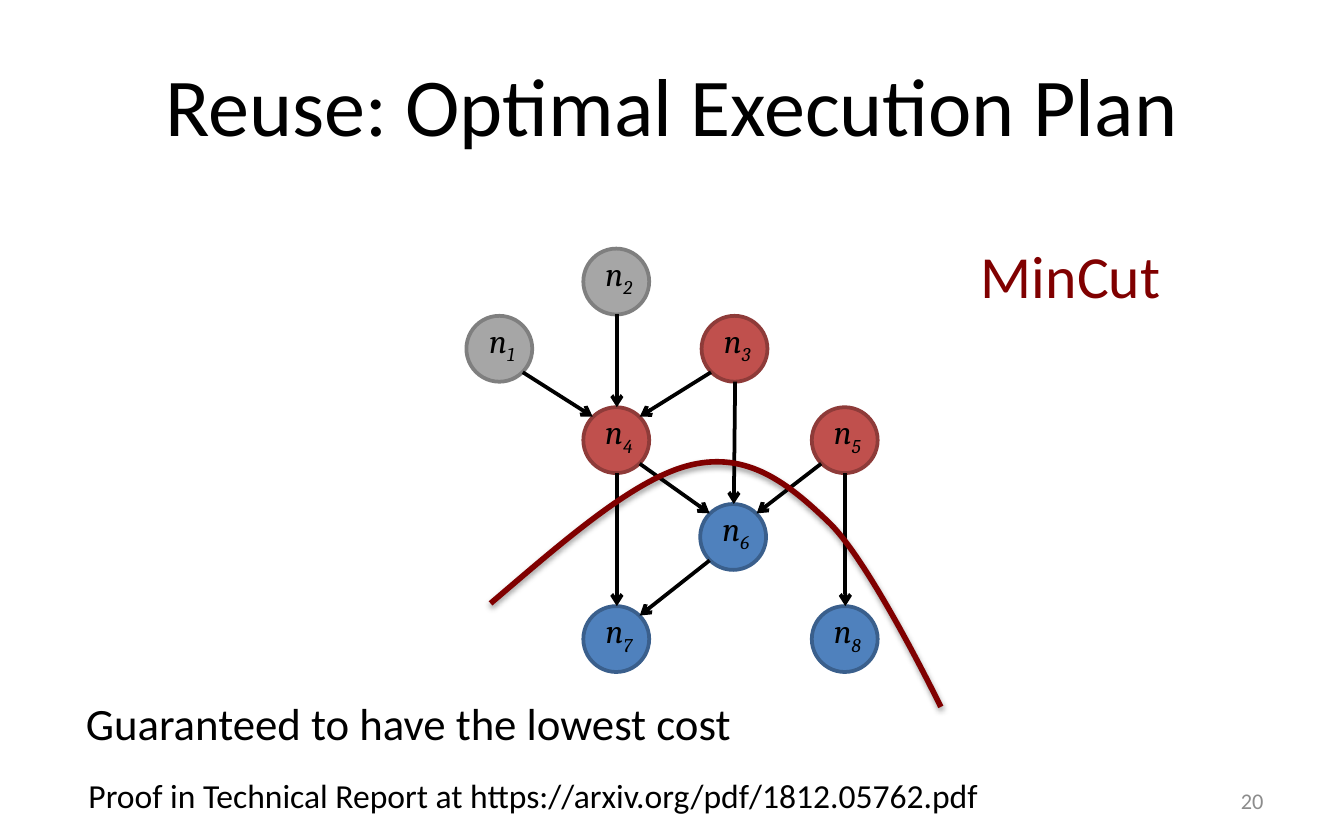
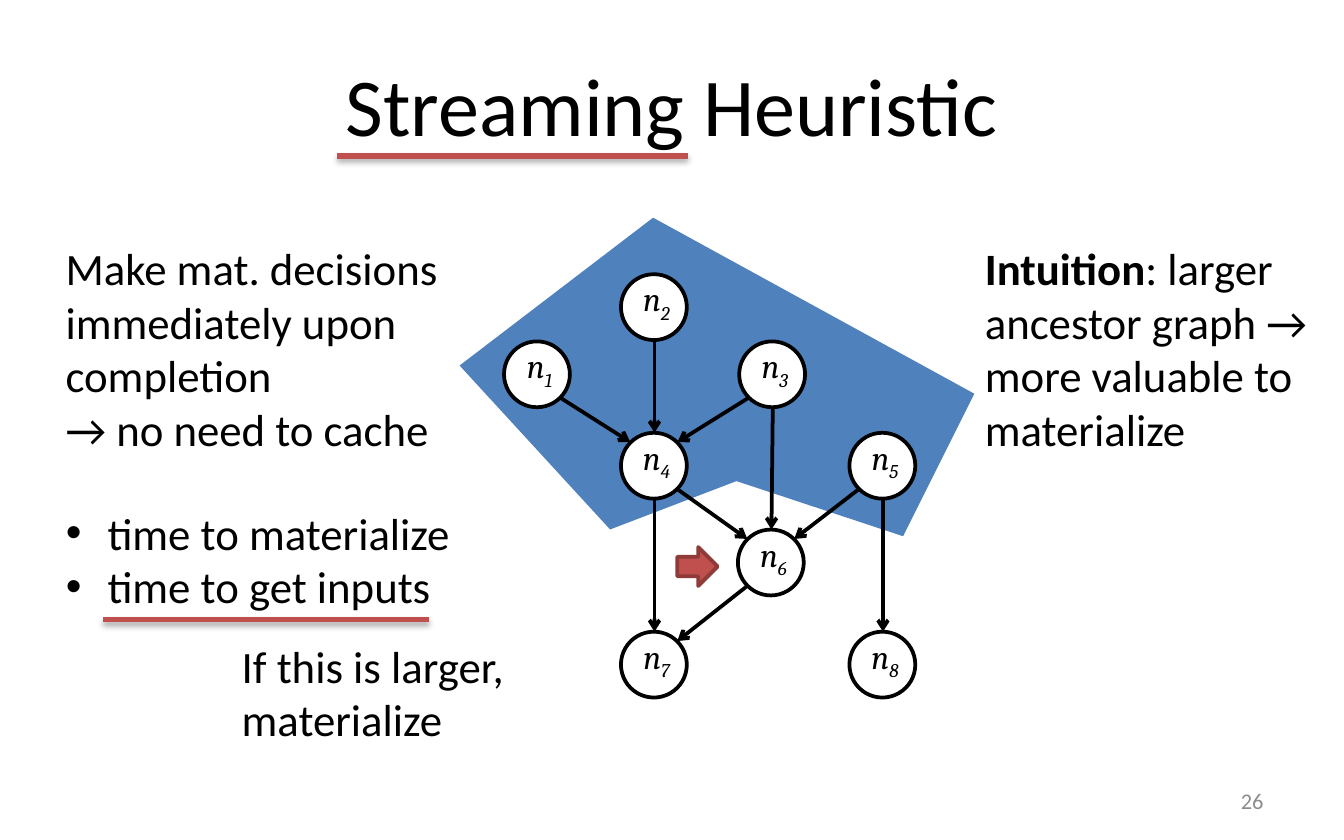
from dataclasses import dataclass
from typing import Any, NamedTuple

from lxml.etree import SubElement
from pptx import Presentation
from pptx.dml.color import RGBColor
from pptx.enum.shapes import MSO_CONNECTOR, MSO_SHAPE
from pptx.enum.text import MSO_ANCHOR, MSO_AUTO_SIZE, PP_ALIGN
from pptx.oxml.ns import qn
from pptx.util import Emu, Pt

PX = 9144  # EMU per px, 100 px to the inch


@dataclass(frozen=True)
class Theme:
    black: str = "000000"
    white: str = "FFFFFF"
    muted: str = "8C8C8C"
    maroon: str = "800000"
    grey: str = "A6A6A6"
    grey_edge: str = "7F7F7F"
    red: str = "C0504D"
    red_edge: str = "8E3B39"
    blue: str = "4F81BD"
    blue_edge: str = "3A5F8C"
    font: str = "Calibri"
    math_font: str = "Cambria"
    title: int = 44
    callout: int = 32
    body: int = 24
    small: int = 18
    number: int = 12
    thin: int = 2
    thick: int = 3


class Box(NamedTuple):
    x: int
    y: int
    w: int
    h: int


class Point(NamedTuple):
    x: int
    y: int


class Paint(NamedTuple):
    fill: str | None
    line: str | None
    width: int = 2


class Shadow(NamedTuple):
    alpha: int  # percent
    blur: int
    dist: int


class Run(NamedTuple):
    text: str
    fmt: dict[str, Any] = {}


T = Theme()
GREY = Paint(T.grey, T.grey_edge)
RED = Paint(T.red, T.red_edge)
BLUE = Paint(T.blue, T.blue_edge)
WHITE = Paint(T.white, T.black)
CURVE_SHADOW = Shadow(38, 40000, 20000)
RULE_SHADOW = Shadow(35, 40000, 23000)

# Graph: node offsets from the graph's corner, and edges
NODE = 49
NODES = {
    1: Point(0, 50), 2: Point(87, 0), 3: Point(175, 50), 4: Point(87, 118),
    5: Point(257, 118), 6: Point(174, 190), 7: Point(87, 266), 8: Point(257, 266),
}
EDGES = [(1, 4), (2, 4), (3, 4), (4, 7), (4, 6), (5, 6), (6, 7), (5, 8), (3, 6)]


def emu(values) -> list[Emu]:
    return [Emu(v * PX) for v in values]


def set_all(obj, values: dict[str, Any]) -> None:
    for name, value in values.items():
        setattr(obj, name, value)


def set_font(font, fmt: dict[str, Any]) -> None:
    values = dict(fmt)
    color = values.pop("color", None)
    set_all(font, values)
    if color:
        font.color.rgb = RGBColor.from_string(color)


def text_format(size: int, color: str = T.black, name: str = T.font) -> dict[str, Any]:
    return {"name": name, "size": Pt(size), "color": color}


# Text
def write(tf, paras: list[list[Run]], fmt: dict[str, Any], align=PP_ALIGN.LEFT) -> None:
    for i, runs in enumerate(paras):
        p = tf.paragraphs[0] if i == 0 else tf.add_paragraph()
        set_all(p, {"alignment": align, "space_before": Pt(0)})
        for run in runs:
            r = p.add_run()
            r.text = run.text
            set_font(r.font, fmt | run.fmt)


def add_text(shapes, box: Box, paras: list[list[Run]], fmt: dict[str, Any],
             wrap: bool = False, align=PP_ALIGN.LEFT, anchor=MSO_ANCHOR.TOP,
             fit=MSO_AUTO_SIZE.SHAPE_TO_FIT_TEXT):
    tf = shapes.add_textbox(*emu(box)).text_frame
    set_all(tf, {"word_wrap": wrap, "auto_size": fit, "vertical_anchor": anchor})
    write(tf, paras, fmt, align)
    return tf


def fill_placeholder(sp, box: Box, paras: list[list[Run]], fmt: dict[str, Any],
                     align, anchor) -> None:
    set_all(sp, dict(zip(("left", "top", "width", "height"), emu(box))))
    tf = sp.text_frame
    set_all(tf, {"auto_size": MSO_AUTO_SIZE.NONE, "vertical_anchor": anchor})
    write(tf, paras, fmt, align)


# Shapes and lines
def set_effect(sp, shadow: Shadow | None = None) -> None:
    """Replace the style's shadow; call once the fill and line are set."""
    lst = SubElement(sp._element.spPr, qn("a:effectLst"))
    if shadow:
        outer = SubElement(lst, qn("a:outerShdw"), blurRad=str(shadow.blur),
                           dist=str(shadow.dist), dir="5400000", rotWithShape="0")
        color = SubElement(outer, qn("a:srgbClr"), val=T.black)
        SubElement(color, qn("a:alpha"), val=str(shadow.alpha * 1000))


def set_line(line, color: str, width: int) -> None:
    line.color.rgb = RGBColor.from_string(color)
    line.width = Pt(width)


def paint(sp, look: Paint, shadow: Shadow | None = None) -> None:
    if look.fill:
        sp.fill.solid()
        sp.fill.fore_color.rgb = RGBColor.from_string(look.fill)
    else:
        sp.fill.background()
    if look.line:
        set_line(sp.line, look.line, look.width)
    else:
        sp.line.fill.background()
    set_effect(sp, shadow)


def add_preset(shapes, kind, box: Box, look: Paint) -> None:
    paint(shapes.add_shape(kind, *emu(box)), look)


def add_line(shapes, start: Point, end: Point, color: str, width: int,
             arrow: bool = False, shadow: Shadow | None = None) -> None:
    c = shapes.add_connector(MSO_CONNECTOR.STRAIGHT, *emu(start), *emu(end))
    set_line(c.line, color, width)
    if arrow:
        SubElement(c.line._get_or_add_ln(), qn("a:tailEnd"), type="arrow")
    set_effect(c, shadow)


def add_outline(shapes, points: list[Point], close: bool):
    builder = shapes.build_freeform(*points[0], scale=PX)
    builder.add_line_segments(points[1:], close=close)
    return builder.convert_to_shape()


def add_curve(shapes, points: list[Point], look: Paint, shadow: Shadow) -> None:
    """Draw cubic segments: a start, then two controls and an end for each."""
    sp = add_outline(shapes, points, close=False)
    outline = next(sp._element.iter(qn("a:path")))
    lines = outline.findall(qn("a:lnTo"))
    for i in range(0, len(lines), 3):
        cubic = SubElement(outline, qn("a:cubicBezTo"))
        for line in lines[i:i + 3]:
            cubic.append(line[0])
            outline.remove(line)
    paint(sp, look, shadow)


def edge_ends(start: Point, end: Point) -> tuple[Point, Point]:
    """Join facing sides of two nodes: vertically, or at 45° on the rims."""
    mid = NODE // 2 + 1
    near, far = 7, NODE - 7
    if start.x == end.x or abs(end.x - start.x) == 1:
        return Point(start.x + mid, start.y + NODE), Point(end.x + mid, end.y)
    out, into = (far, near) if end.x > start.x else (near, far)
    return Point(start.x + out, start.y + far), Point(end.x + into, end.y + near)


def add_graph(s, corner: Point, looks: dict[int, Paint]) -> None:
    shapes = s.shapes.add_group_shape().shapes
    at = {n: Point(corner.x + d.x, corner.y + d.y) for n, d in NODES.items()}
    fmt = text_format(T.small, name=T.math_font) | {"italic": True}
    for n, (x, y) in at.items():
        add_preset(shapes, MSO_SHAPE.OVAL, Box(x, y, NODE, NODE), looks[n])
        tf = add_text(shapes, Box(x + 3, y, 47, 40), [[Run("n"), Run(str(n))]], fmt,
                      align=PP_ALIGN.CENTER, anchor=MSO_ANCHOR.MIDDLE)
        tf.paragraphs[0].runs[1].font._element.set("baseline", "-25000")
    for a, b in EDGES:
        add_line(shapes, *edge_ends(at[a], at[b]), T.black, T.thin, arrow=True)


# Slides
def add_slide(prs, layout: int, title: str, number: int):
    s = prs.slides.add_slide(prs.slide_layouts[layout])
    fill_placeholder(s.shapes.title, Box(50, 25, 900, 104), [[Run(title)]],
                     text_format(T.title), PP_ALIGN.CENTER, MSO_ANCHOR.MIDDLE)
    add_text(s.shapes, Box(717, 579, 233, 33), [[Run(str(number))]],
             text_format(T.number, T.muted), wrap=True, align=PP_ALIGN.RIGHT,
             anchor=MSO_ANCHOR.MIDDLE, fit=MSO_AUTO_SIZE.NONE)
    return s


def add_plan_slide(prs) -> None:
    s = add_slide(prs, 5, "Reuse: Optimal Execution Plan", 20)
    looks = dict.fromkeys((1, 2), GREY) | dict.fromkeys((3, 4, 5), RED)
    add_graph(s, Point(347, 185), looks | dict.fromkeys((6, 7, 8), BLUE))
    add_text(s.shapes, Box(720, 173, 155, 64), [[Run("MinCut")]],
             text_format(T.callout, T.maroon))
    cut = [Point(365, 449), Point(419, 403), Point(472, 356), Point(514, 346),
           Point(556, 336), Point(586, 359), Point(617, 389),
           Point(648, 419), Point(700, 526), Point(700, 526)]
    add_curve(s.shapes, cut, Paint(None, T.maroon, T.thick), CURVE_SHADOW)
    add_text(s.shapes, Box(54, 513, 509, 50),
             [[Run("Guaranteed to have the lowest cost")]], text_format(T.body))
    add_text(s.shapes, Box(56, 572, 696, 40),
             [[Run("Proof in Technical Report at https://arxiv.org/pdf/1812.05762.pdf")]],
             text_format(T.small))


def add_heuristic_slide(prs) -> None:
    s = add_slide(prs, 1, "Streaming Heuristic", 26)
    body = text_format(T.body)

    # Ancestor region behind the graph
    region = [Point(454, 394), Point(548, 358), Point(672, 399), Point(725, 293),
              Point(486, 162), Point(342, 272)]
    paint(add_outline(s.shapes, region, close=True), Paint(T.blue, None))
    add_graph(s, Point(375, 204), dict.fromkeys(NODES, WHITE))
    add_preset(s.shapes, MSO_SHAPE.RIGHT_ARROW, Box(504, 407, 30, 29), RED)

    # Bulleted costs
    costs = s.placeholders[1]
    fill_placeholder(costs, Box(39, 371, 318, 91),
                     [[Run("time to materialize")], [Run("time to get inputs")]],
                     body, PP_ALIGN.LEFT, MSO_ANCHOR.TOP)
    for p in costs.text_frame.paragraphs:
        pPr = p._p.get_or_add_pPr()
        pPr.set("marL", str(31 * PX))
        pPr.set("indent", str(-31 * PX))

    # Underlines
    for x1, x2, y in ((251, 512, 116), (77, 319, 461)):
        add_line(s.shapes, Point(x1, y), Point(x2, y), T.red, T.thick, shadow=RULE_SHADOW)

    # Side notes
    add_text(s.shapes, Box(39, 174, 303, 172),
             [[Run("Make mat. decisions immediately upon completion")],
              [Run("→ no need to cache")]], body, wrap=True)
    add_text(s.shapes, Box(170, 470, 221, 91),
             [[Run("If this is larger,")], [Run("materialize")]], body)
    add_text(s.shapes, Box(723, 174, 277, 172),
             [[Run("Intuition", {"bold": True}),
               Run(": larger ancestor graph → more valuable to materialize")]],
             body, wrap=True)


def main() -> None:
    prs = Presentation()
    prs.slide_width, prs.slide_height = emu((1000, 625))
    add_plan_slide(prs)
    add_heuristic_slide(prs)
    prs.save("out.pptx")


if __name__ == "__main__":
    main()
